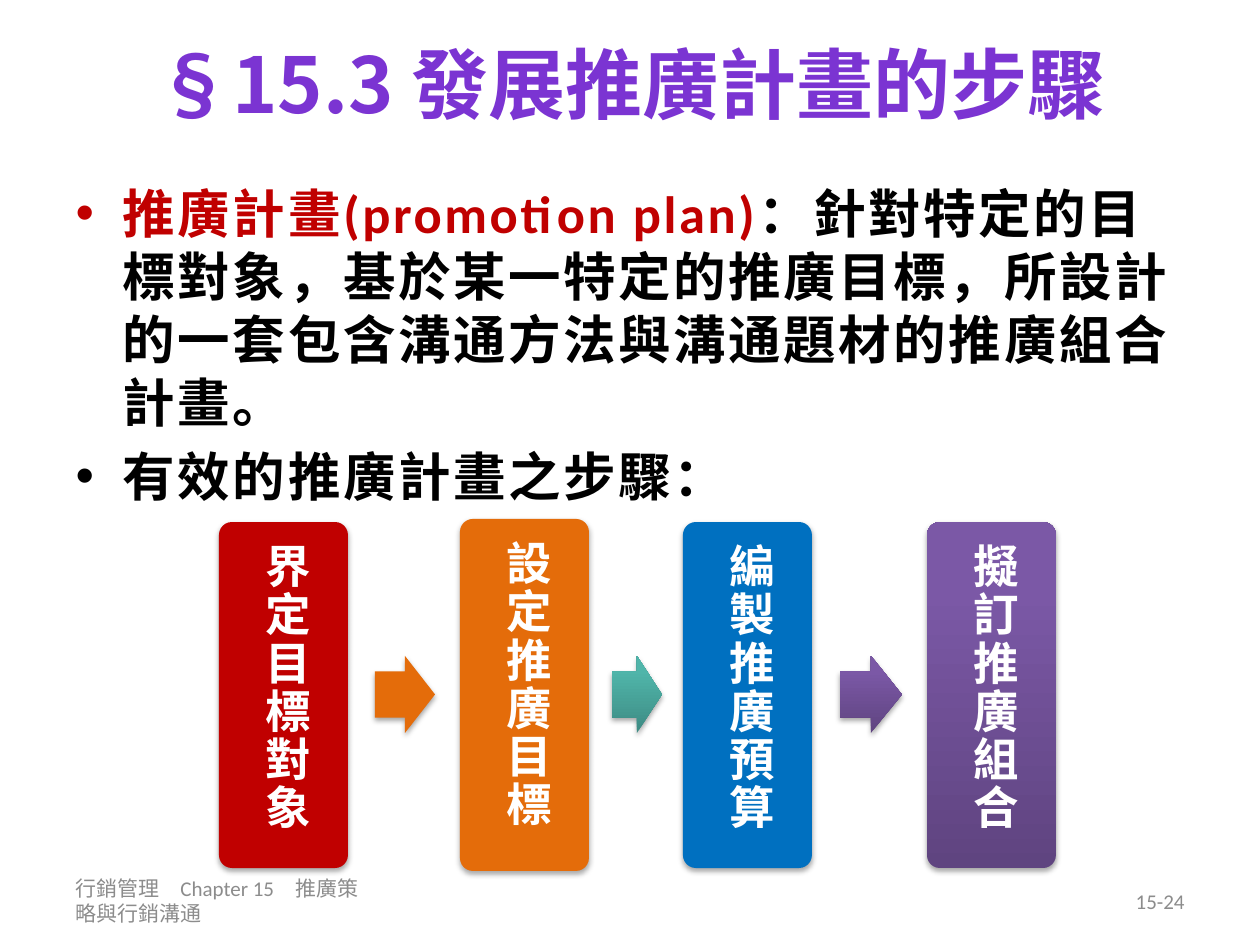
import lxml.etree
import pptx
import pptx.dml.color
import pptx.enum.shapes
import pptx.enum.text
import pptx.oxml.ns
import pptx.util

ALIGN = pptx.enum.text.PP_ALIGN
ANCHOR = pptx.enum.text.MSO_ANCHOR
SHAPE = pptx.enum.shapes.MSO_SHAPE
CJK_FONT = "Noto Sans CJK SC"
PURPLE = ("5F4480", "7B58A6")
TEAL = ("3D8B83", "50B5AA")


def px(length):
    """Turn pixels into EMU at 126 pixels to the inch."""
    return pptx.util.Emu(round(length * 914400 / 126))


def rgb(value):
    """Return the colour for a hex string."""
    return pptx.dml.color.RGBColor.from_string(value)


def add_element(parent, tag, **attributes):
    """Append a DrawingML element to a parent."""
    element = lxml.etree.SubElement(parent, pptx.oxml.ns.qn(tag))
    for name, value in attributes.items():
        element.set(name, str(value))
    return element


def place(shape, box):
    """Move a shape into a left, top, width, height box."""
    shape.left, shape.top, shape.width, shape.height = map(px, box)


def format_run(run, size, color, bold=False, spacing=0, latin="Calibri"):
    """Set the font, colour and letter spacing of a run."""
    run.font.size = pptx.util.Pt(size)
    run.font.bold = bold
    run.font.color.rgb = rgb(color)
    run.font.name = latin
    properties = run._r.get_or_add_rPr()
    add_element(properties, "a:ea", typeface=CJK_FONT)
    if spacing:
        properties.set("spc", str(round(spacing * 100)))


def fill_title(title, box):
    """Write the section title."""
    place(title, box)
    title.text_frame.text = "§15.3 發展推廣計畫的步驟"
    format_run(title.text_frame.paragraphs[0].runs[0], 44, "7B34D2", True, latin=CJK_FONT)


def fill_body(body, box):
    """Write the bulleted definition and the lead-in to the steps."""
    place(body, box)
    frame = body.text_frame
    frame.text = ""
    definition = frame.paragraphs[0]
    definition.space_before = pptx.util.Pt(0)
    parts = (
        (definition, "推廣計畫(promotion plan)", "C00000"),
        (
            definition,
            "：針對特定的目標對象，基於某一特定的推廣目標，所設計的一套包含溝通方法與溝通題材的推廣組合計畫。",
            "000000",
        ),
        (frame.add_paragraph(), "有效的推廣計畫之步驟：", "000000"),
    )
    for paragraph, text, color in parts:
        run = paragraph.add_run()
        run.text = text
        format_run(run, 30, color, True, 1.5)


def add_footer(slide, box, text, alignment):
    """Add a small grey footer text."""
    frame = slide.shapes.add_textbox(*map(px, box)).text_frame
    frame.word_wrap = True
    frame.vertical_anchor = ANCHOR.MIDDLE
    frame.text = text
    frame.paragraphs[0].alignment = alignment
    format_run(frame.paragraphs[0].runs[0], 12, "8C8C8C")


def add_block(slide, kind, box, fill):
    """Add a softly shadowed shape with a plain or bottom-to-top gradient fill."""
    shape = slide.shapes.add_shape(kind, *map(px, box))
    if isinstance(fill, str):
        shape.fill.solid()
        shape.fill.fore_color.rgb = rgb(fill)
    else:
        shape.fill.gradient()
        shape.fill.gradient_angle = 90
        for stop, color, position in zip(shape.fill.gradient_stops, fill, (0, 0.8)):
            stop.color.rgb = rgb(color)
            stop.position = position
    shape.line.fill.background()
    shape.shadow.inherit = False
    effects = shape._element.spPr.find(pptx.oxml.ns.qn("a:effectLst"))
    shadow = add_element(
        effects, "a:outerShdw", blurRad=pptx.util.Pt(3.1), dist=pptx.util.Pt(1.8),
        dir=5400000, rotWithShape=0,
    )
    add_element(add_element(shadow, "a:srgbClr", val="000000"), "a:alpha", val=35000)
    return shape


def add_step(slide, box, text, fill):
    """Add a step card with vertical text."""
    card = add_block(slide, SHAPE.ROUNDED_RECTANGLE, box, fill)
    card.adjustments[0] = 0.1
    frame = card.text_frame
    frame.margin_left = frame.margin_right = px(18)
    frame.margin_top = frame.margin_bottom = px(18)
    frame.vertical_anchor = ANCHOR.MIDDLE
    frame.word_wrap = True
    frame._txBody.bodyPr.set("vert", "eaVert")
    frame.text = text
    paragraph = frame.paragraphs[0]
    paragraph.alignment = ALIGN.CENTER
    paragraph.line_spacing = 0.9
    after = add_element(paragraph._p.get_or_add_pPr(), "a:spcAft")
    add_element(after, "a:spcPct", val=35000)
    format_run(paragraph.runs[0], 26, "FFFFFF", True, 1.5)


def add_process(slide, box):
    """Add the four steps and the arrows between them."""
    left, top, width, height = box
    steps = (
        (0, 0, "界定目標對象", "C00000"),
        (241, 3, "設定推廣目標", "E46C0A"),
        (464, 0, "編製推廣預算", "0070C0"),
        (width - 129, 0, "擬訂推廣組合", PURPLE),
    )
    for offset, extra, text, fill in steps:
        card_box = (left + offset, top - extra, 129, height + 2 * extra)
        add_step(slide, card_box, text, fill)
    for offset, length, fill in ((156, 60, "E46C0A"), (393, 50, TEAL), (621, 62, PURPLE)):
        arrow_box = (left + offset, top + (height - 77) // 2, length, 77)
        arrow = add_block(slide, SHAPE.RIGHT_ARROW, arrow_box, fill)
        arrow.adjustments[0] = 0.6
        arrow.adjustments[1] = 0.5


def main():
    """Build and save the slide."""
    presentation = pptx.Presentation()
    presentation.slide_width = px(1260)
    presentation.slide_height = px(945)
    slide = presentation.slides.add_slide(presentation.slide_layouts[1])
    fill_title(slide.shapes.title, (63, 0, 1134, 165))
    fill_body(slide.placeholders[1], (63, 175, 1134, 377))
    add_footer(slide, (63, 876, 309, 50), "行銷管理　Chapter 15　推廣策略與行銷溝通", ALIGN.LEFT)
    add_footer(slide, (903, 876, 294, 50), "15-24", ALIGN.RIGHT)
    add_process(slide, (219, 522, 837, 346))
    presentation.save("out.pptx")


if __name__ == "__main__":
    main()
